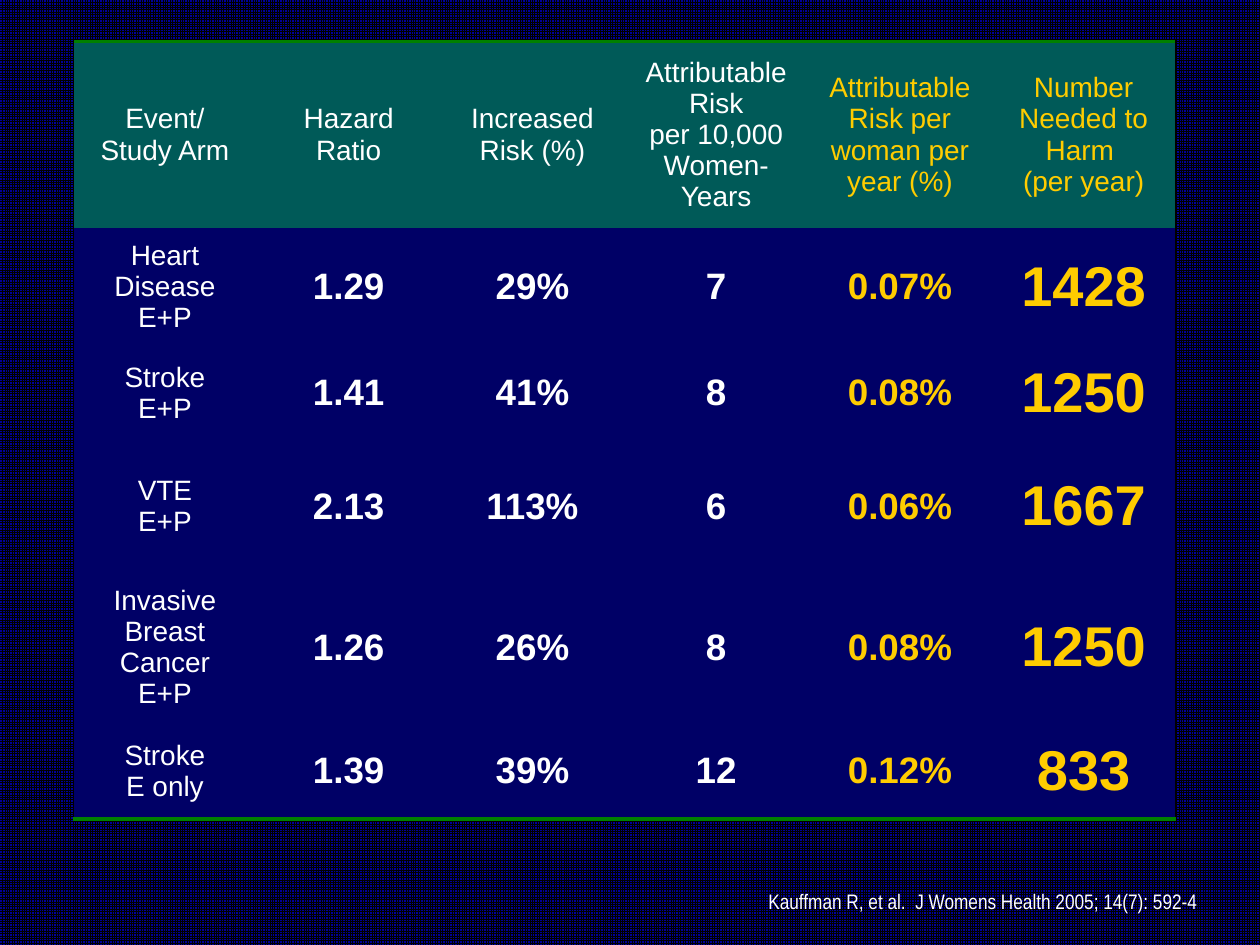
from lxml.etree import SubElement
from pptx import Presentation
from pptx.dml.color import RGBColor
from pptx.enum.dml import MSO_PATTERN
from pptx.enum.text import MSO_ANCHOR, MSO_AUTO_SIZE, PP_ALIGN
from pptx.oxml.ns import qn
from pptx.util import Inches, Pt

BLACK = RGBColor(0x00, 0x00, 0x00)
WHITE = RGBColor(0xFF, 0xFF, 0xFF)
GOLD = RGBColor(0xFF, 0xCC, 0x00)
BLUE = RGBColor(0x00, 0x00, 0x99)
NAVY = RGBColor(0x00, 0x00, 0x66)
TEAL = RGBColor(0x00, 0x5A, 0x58)
GREEN = RGBColor(0x00, 0x80, 0x00)
NO_STYLE_NO_GRID = "{2D5ABB26-0587-4C30-8999-92F81FD0307C}"

ROWS = [
    ["Event/\nStudy Arm", "Hazard Ratio", "Increased\nRisk (%)",
     "Attributable Risk\nper 10,000 Women-Years",
     "Attributable Risk per woman per year (%)",
     "Number Needed to Harm \n(per year)"],
    ["Heart Disease\nE+P", "1.29", "29%", "7", "0.07%", "1428"],
    ["Stroke\nE+P", "1.41", "41%", "8", "0.08%", "1250"],
    ["VTE\nE+P", "2.13", "113%", "6", "0.06%", "1667"],
    ["Invasive Breast Cancer\nE+P", "1.26", "26%", "8", "0.08%", "1250"],
    ["Stroke\nE only", "1.39", "39%", "12", "0.12%", "833"],
]
ROW_HEIGHTS = [1.48, 0.93, 0.76, 1.04, 1.2, 0.76]
VALUE_SIZES = [16, 21, 21, 21, 21, 32]
LAST_ROW = len(ROWS) - 1
LAST_COLUMN = len(ROWS[0]) - 1


def add_border(cell, side, color, width):
    """Draw one cell edge; call in the order L, R, T, B and before the fill."""
    line = SubElement(cell._tc.get_or_add_tcPr(), qn(f"a:ln{side}"), w=str(Pt(width)))
    solid = SubElement(line, qn("a:solidFill"))
    SubElement(solid, qn("a:srgbClr"), val=str(color))


def format_font(font, name, size, color, bold=False):
    settings = {"name": name, "size": Pt(size), "bold": bold}
    for attribute, value in settings.items():
        setattr(font, attribute, value)
    font.color.rgb = color


prs = Presentation()
prs.slide_width, prs.slide_height = Inches(10), Inches(7.5)
slide = prs.slides.add_slide(prs.slide_layouts[6])

backdrop = slide.background.fill
backdrop.patterned()
backdrop.pattern = MSO_PATTERN.SMALL_GRID
backdrop.fore_color.rgb = BLACK
backdrop.back_color.rgb = BLUE

# Risk table
risks = slide.shapes.add_table(
    len(ROWS), len(ROWS[0]), Inches(0.58), Inches(0.33), Inches(8.75), Inches(6.17)
).table
risks.horz_banding = False
risks.first_row = False
risks._tbl.tblPr.find(qn("a:tableStyleId")).text = NO_STYLE_NO_GRID
for column in risks.columns:
    column.width = Inches(8.75 / len(ROWS[0]))

for r, (entries, height) in enumerate(zip(ROWS, ROW_HEIGHTS)):
    risks.rows[r].height = Inches(height)
    for c, entry in enumerate(entries):
        cell = risks.cell(r, c)
        borders = [
            ("L", BLACK, 0.75, c == 0),
            ("R", BLACK, 0.75, c == LAST_COLUMN),
            ("T", GREEN, 2.25, r == 0),
            ("B", GREEN, 2.25, r == LAST_ROW),
        ]
        for side, color, width, on_edge in borders:
            if on_edge:
                add_border(cell, side, color, width)
        cell.fill.solid()
        cell.fill.fore_color.rgb = TEAL if r == 0 else NAVY
        cell.vertical_anchor = MSO_ANCHOR.MIDDLE
        cell.text = entry
        size = 16 if r == 0 else VALUE_SIZES[c]
        for paragraph in cell.text_frame.paragraphs:
            paragraph.alignment = PP_ALIGN.CENTER
            format_font(paragraph.runs[0].font, "Arial", size,
                        GOLD if c >= 4 else WHITE, bold=r > 0 and c > 0)

# Citation
citation = slide.shapes.add_textbox(
    Inches(6), Inches(7), Inches(3.66), Inches(0.3)
).text_frame
citation.word_wrap = False
citation.auto_size = MSO_AUTO_SIZE.SHAPE_TO_FIT_TEXT
citation.text = "Kauffman R, et al.  J Womens Health 2005; 14(7): 592-4"
citation.paragraphs[0].space_before = Pt(6)
format_font(citation.paragraphs[0].runs[0].font, "Arial Narrow", 12, WHITE)

prs.save("out.pptx")
